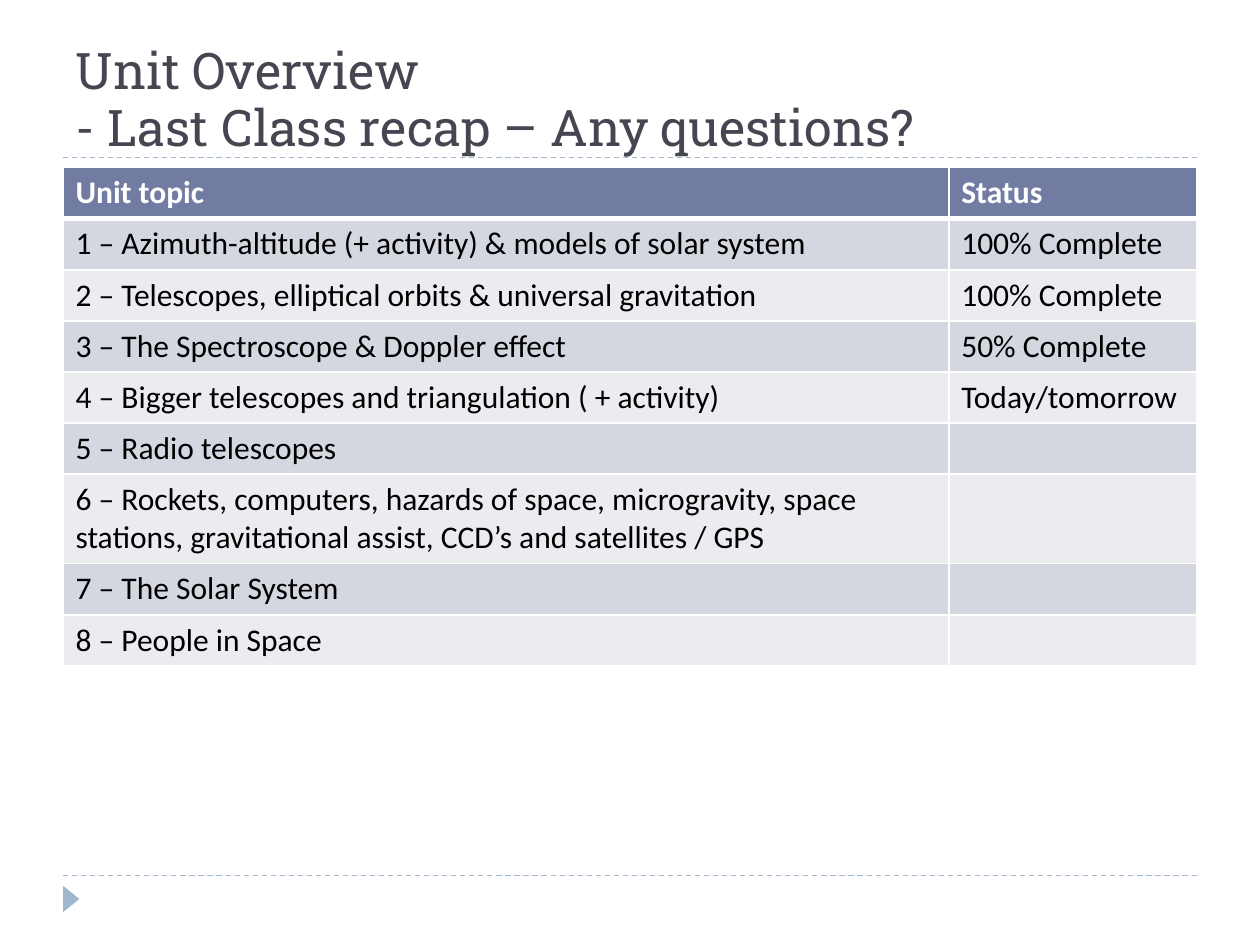
from dataclasses import dataclass

from lxml import etree
from pptx import Presentation
from pptx import util as u
from pptx.dml.color import RGBColor
from pptx.enum import dml, shapes, text
from pptx.oxml.ns import qn

TITLE_COLOR = RGBColor(0x46, 0x46, 0x53)
ACCENT = RGBColor(0x9F, 0xB8, 0xCD)
HEADER_FILL = RGBColor(0x72, 0x7C, 0xA3)
BAND_FILLS = (RGBColor(0xD5, 0xD7, 0xE0), RGBColor(0xEB, 0xEC, 0xF0))
WHITE = RGBColor(0xFF, 0xFF, 0xFF)
BLACK = RGBColor(0x00, 0x00, 0x00)

LEFT, WIDTH = 0.5, 9
ROW_HEIGHT = 0.4
COLUMN_WIDTHS = (7.03, 1.97)
RULE_HEIGHTS = (6.95, 1.25)


@dataclass
class UnitTopic:
    topic: str
    status: str = ""


HEADER = UnitTopic("Unit topic", "Status")
TOPICS = [
    UnitTopic("1 – Azimuth-altitude (+ activity) & models of solar system", "100% Complete"),
    UnitTopic("2 – Telescopes, elliptical orbits & universal gravitation", "100% Complete"),
    UnitTopic("3 – The Spectroscope & Doppler effect", "50% Complete"),
    UnitTopic("4 – Bigger telescopes and triangulation ( + activity)", "Today/tomorrow"),
    UnitTopic("5 – Radio telescopes"),
    UnitTopic("6 – Rockets, computers, hazards of space, microgravity, space stations, "
              "gravitational assist, CCD’s and satellites / GPS"),
    UnitTopic("7 – The Solar System"),
    UnitTopic("8 – People in Space"),
]


def set_attributes(target, values: dict) -> None:
    for name, value in values.items():
        setattr(target, name, value)


def format_font(font, color: RGBColor, **values) -> None:
    set_attributes(font, values)
    font.color.rgb = color


def add_rule(slide, top: float) -> None:
    """Draw a dashed line across the content width."""
    rule = slide.shapes.add_connector(
        shapes.MSO_CONNECTOR.STRAIGHT,
        u.Inches(LEFT), u.Inches(top), u.Inches(LEFT + WIDTH), u.Inches(top))
    rule.line.color.rgb = ACCENT
    set_attributes(rule.line, {"width": u.Pt(0.75), "dash_style": dml.MSO_LINE.DASH})
    etree.SubElement(rule._element.spPr, qn("a:effectLst"))


def add_marker(slide) -> None:
    """Draw the small triangle that points right in the footer."""
    marker = slide.shapes.add_shape(
        shapes.MSO_SHAPE.ISOSCELES_TRIANGLE,
        u.Inches(0.46), u.Inches(7.07), u.Inches(0.21), u.Inches(0.13))
    marker.rotation = 90
    marker.shadow.inherit = False
    marker.fill.solid()
    marker.fill.fore_color.rgb = ACCENT
    marker.line.fill.background()


def add_title(slide, words: str) -> None:
    title = slide.shapes.title
    set_attributes(title, {"left": u.Inches(LEFT), "top": u.Inches(0.17),
                           "width": u.Inches(WIDTH), "height": u.Inches(1.08)})
    frame = title.text_frame
    frame.text = words
    set_attributes(frame, {"auto_size": text.MSO_AUTO_SIZE.NONE, "word_wrap": True,
                           "vertical_anchor": text.MSO_ANCHOR.BOTTOM, "margin_bottom": 0})
    paragraph = frame.paragraphs[0]
    set_attributes(paragraph, {"alignment": text.PP_ALIGN.LEFT, "line_spacing": 0.93})
    for run in paragraph.runs:
        format_font(run.font, TITLE_COLOR, name="Roboto Slab", size=u.Pt(28.8))


def add_borders(cell, bottom_width: float) -> None:
    """Put white borders in front of the cell's fill, as the schema asks."""
    properties = cell._tc.get_or_add_tcPr()
    sides = {"lnL": 1, "lnR": 1, "lnT": 1, "lnB": bottom_width}
    for index, (side, width) in enumerate(sides.items()):
        border = etree.Element(qn(f"a:{side}"), w=str(u.Pt(width)))
        fill = etree.SubElement(border, qn("a:solidFill"))
        etree.SubElement(fill, qn("a:srgbClr"), val=str(WHITE))
        properties.insert(index, border)


def fill_row(row, entry: UnitTopic, fill: RGBColor, is_header: bool) -> None:
    row.height = u.Inches(ROW_HEIGHT)
    for cell, words in zip(row.cells, (entry.topic, entry.status)):
        cell.fill.solid()
        cell.fill.fore_color.rgb = fill
        add_borders(cell, 3 if is_header else 1)
        if words:
            run = cell.text_frame.paragraphs[0].add_run()
            run.text = words
            format_font(run.font, WHITE if is_header else BLACK,
                        name="Calibri", size=u.Pt(18), bold=is_header)


def add_topic_table(slide) -> None:
    table = slide.shapes.add_table(
        len(TOPICS) + 1, len(COLUMN_WIDTHS), u.Inches(LEFT), u.Inches(1.33),
        u.Inches(WIDTH), u.Inches(ROW_HEIGHT * (len(TOPICS) + 1))).table
    for column, width in zip(table.columns, COLUMN_WIDTHS):
        column.width = u.Inches(width)
    fill_row(table.rows[0], HEADER, HEADER_FILL, True)
    for index, entry in enumerate(TOPICS):
        fill_row(table.rows[index + 1], entry, BAND_FILLS[index % 2], False)


def main() -> None:
    presentation = Presentation()
    set_attributes(presentation, {"slide_width": u.Inches(10), "slide_height": u.Inches(7.5)})
    slide = presentation.slides.add_slide(presentation.slide_layouts[5])

    # Frame of the slide
    for top in RULE_HEIGHTS:
        add_rule(slide, top)
    add_marker(slide)

    # Content
    add_title(slide, "Unit Overview\v- Last Class recap – Any questions?")
    add_topic_table(slide)
    presentation.save("out.pptx")


if __name__ == "__main__":
    main()
